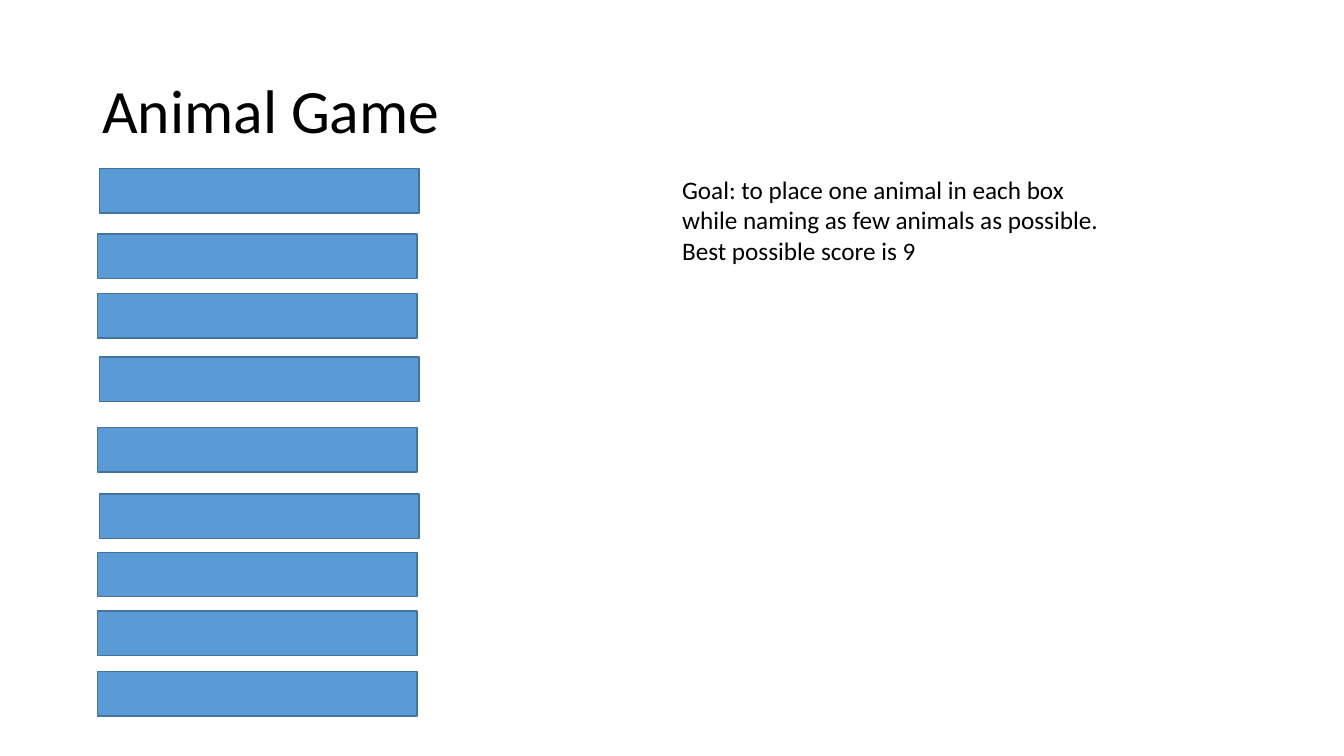
from dataclasses import dataclass

from pptx import Presentation
from pptx.dml.color import RGBColor
from pptx.enum.shapes import MSO_SHAPE
from pptx.enum.text import MSO_ANCHOR
from pptx.slide import Slide
from pptx.util import Cm, Pt

BLACK = RGBColor(0x00, 0x00, 0x00)
BOX_FILL = RGBColor(0x5B, 0x9B, 0xD5)
BOX_LINE = RGBColor(0x43, 0x73, 0x9E)
FONT = "Calibri"
BOX_WIDTH = 8.05
BOX_HEIGHT = 1.12
LEFT = 2.46
INDENTED = 2.51


@dataclass(frozen=True)
class AnimalBox:
    left: float
    top: float


@dataclass(frozen=True)
class Label:
    text: str
    left: float
    top: float
    width: float
    height: float
    size: int
    anchor: MSO_ANCHOR = MSO_ANCHOR.TOP
    line_spacing: float = 1.0


LABELS = [
    Label("Animal Game", 2.33, 1.01, 29.21, 3.68, 44, MSO_ANCHOR.MIDDLE, 0.9),
    Label(
        "Goal: to place one animal in each box while naming as few animals "
        "as possible. Best possible score is 9",
        16.94, 4.27, 11.2, 2.57, 18,
    ),
]

ANIMAL_BOXES = [
    AnimalBox(INDENTED, 4.25),
    AnimalBox(LEFT, 5.9),
    AnimalBox(LEFT, 7.4),
    AnimalBox(INDENTED, 9),
    AnimalBox(LEFT, 10.78),
    AnimalBox(INDENTED, 12.45),
    AnimalBox(LEFT, 13.92),
    AnimalBox(LEFT, 15.4),
    AnimalBox(LEFT, 16.92),
]


def add_label(s: Slide, label: Label) -> None:
    sp = s.shapes.add_textbox(
        Cm(label.left), Cm(label.top), Cm(label.width), Cm(label.height)
    )
    tf = sp.text_frame
    tf.word_wrap = True
    tf.vertical_anchor = label.anchor
    p = tf.paragraphs[0]
    p.text = label.text
    p.line_spacing = label.line_spacing
    p.font.name = FONT
    p.font.size = Pt(label.size)
    p.font.color.rgb = BLACK


def add_animal_box(s: Slide, box: AnimalBox) -> None:
    sp = s.shapes.add_shape(
        MSO_SHAPE.RECTANGLE,
        Cm(box.left), Cm(box.top), Cm(BOX_WIDTH), Cm(BOX_HEIGHT),
    )
    sp.shadow.inherit = False
    sp.fill.solid()
    sp.fill.fore_color.rgb = BOX_FILL
    sp.line.color.rgb = BOX_LINE
    sp.line.width = Pt(1)


def main() -> None:
    prs = Presentation()
    prs.slide_width = Cm(33.87)
    prs.slide_height = Cm(19.05)
    s = prs.slides.add_slide(prs.slide_layouts[6])
    for label in LABELS:
        add_label(s, label)
    for box in ANIMAL_BOXES:
        add_animal_box(s, box)
    prs.save("out.pptx")


if __name__ == "__main__":
    main()
